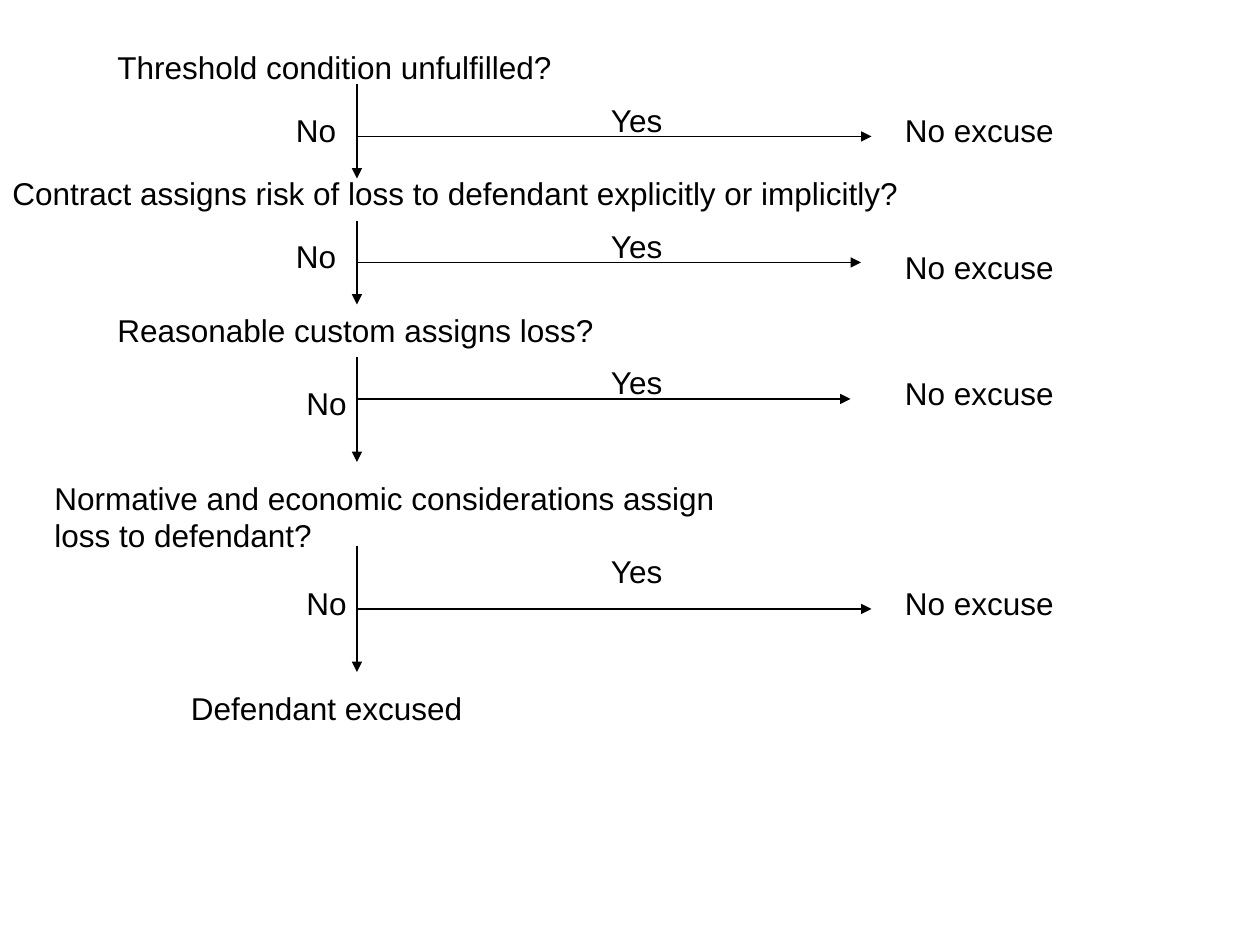
from pptx import Presentation
from pptx.dml.color import RGBColor
from pptx.enum.shapes import MSO_CONNECTOR
from pptx.enum.text import MSO_AUTO_SIZE
from pptx.oxml.ns import qn
from pptx.util import Pt
from lxml import etree

STRAIGHT = MSO_CONNECTOR.STRAIGHT
FIT_SHAPE = MSO_AUTO_SIZE.SHAPE_TO_FIT_TEXT
COLORS = {"ink": "000000"}
INK = RGBColor.from_string(COLORS["ink"])
FONT = {"name": "Arial", "size": Pt(18)}

presentation = Presentation()
presentation.slide_width, presentation.slide_height = Pt(720), Pt(540)
slide = presentation.slides.add_slide(presentation.slide_layouts[6])


def add_text(text, left, top, width, height=29):
    shape = slide.shapes.add_textbox(Pt(left), Pt(top), Pt(width), Pt(height))
    frame = shape.text_frame
    frame.word_wrap = True
    frame.auto_size = FIT_SHAPE
    run = frame.paragraphs[0].add_run()
    run.text = text
    for name, value in FONT.items():
        setattr(run.font, name, value)
    run.font.color.rgb = INK


def add_arrow(x1, y1, x2, y2):
    arrow = slide.shapes.add_connector(STRAIGHT, Pt(x1), Pt(y1), Pt(x2), Pt(y2))
    arrow.line.color.rgb = INK
    arrow.line.width = Pt(0.75)
    etree.SubElement(arrow.line._ln, qn("a:tailEnd"), type="triangle")
    etree.SubElement(arrow._element.spPr, qn("a:effectLst"))


# Columns of the flowchart
TRUNK_X = 204
YES_X = 342
OUTCOME_X = 510

# Each step: question (text, left, top, width, height), trunk (top, bottom),
# branch (y, right end), "No" (left, top), "Yes" top, outcome top
steps = [
    (("Threshold condition unfulfilled?", 60, 24, 306, 29),
     (48, 102), (78, 498), (162, 60), 54, 60),
    (("Contract assigns risk of loss to defendant explicitly or implicitly?",
      0, 96, 540, 29),
     (126, 174), (150, 492), (162, 132), 126, 138),
    (("Reasonable custom assigns loss?", 60, 174, 306, 29),
     (204, 264), (228, 486), (168, 216), 204, 210),
    (("Normative and economic considerations assign loss to defendant?",
      24, 270, 420, 50.5),
     (312, 384), (348, 498), (168, 330), 312, 330),
]

for question, trunk, branch, no_place, yes_top, outcome_top in steps:
    add_text(*question)
    # "No" leads down, "Yes" leads right
    add_arrow(TRUNK_X, trunk[0], TRUNK_X, trunk[1])
    add_arrow(TRUNK_X, branch[0], branch[1], branch[0])
    add_text("No", *no_place, 54)
    add_text("Yes", YES_X, yes_top, 60)
    add_text("No excuse", OUTCOME_X, outcome_top, 120)

# Final result
add_text("Defendant excused", 102, 390, 192)

presentation.save("out.pptx")
